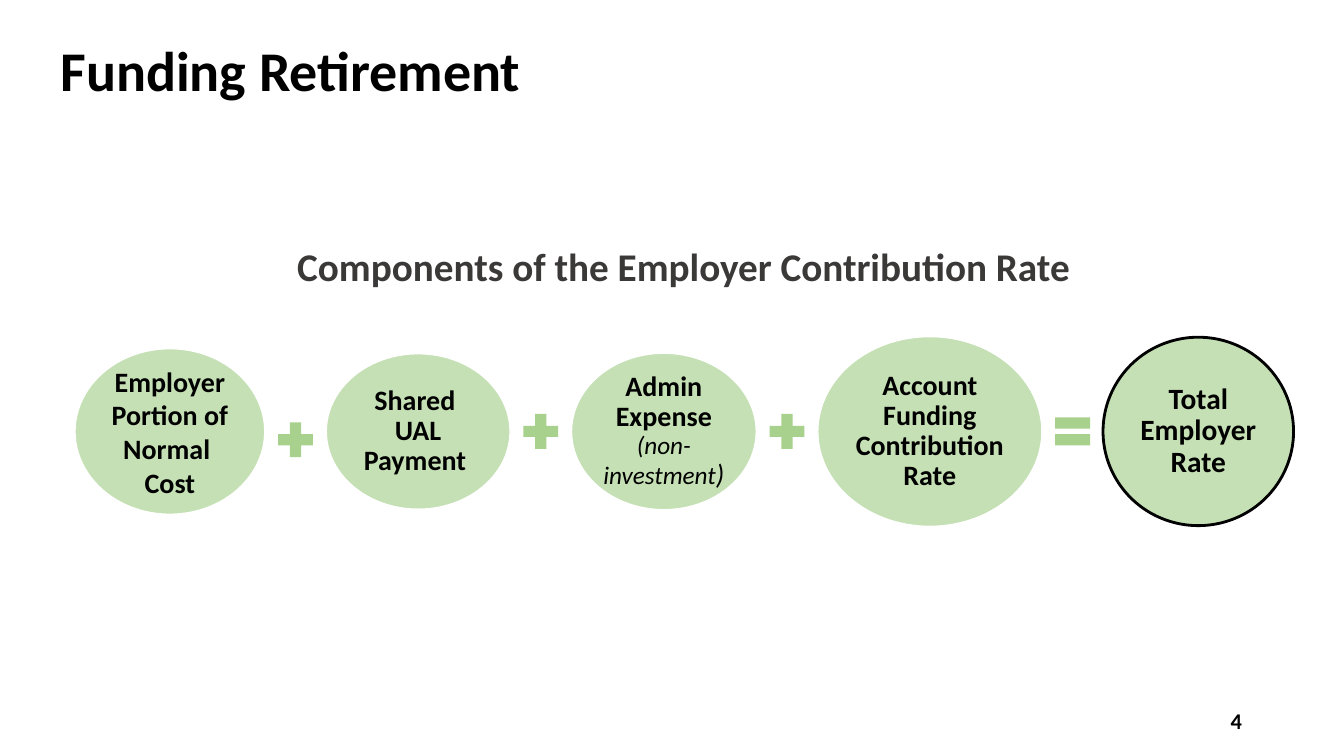
from pptx import Presentation
from pptx.dml.color import RGBColor
from pptx.enum.shapes import MSO_SHAPE
from pptx.enum.text import MSO_ANCHOR, PP_ALIGN
from pptx.util import Pt

BLACK = RGBColor(0x00, 0x00, 0x00)
WHITE = RGBColor(0xFF, 0xFF, 0xFF)
CHARCOAL = RGBColor(0x3B, 0x38, 0x38)
PALE_GREEN = RGBColor(0xC5, 0xE0, 0xB4)
LEAF_GREEN = RGBColor(0xA9, 0xD1, 0x8E)

FONT = "Calibri"
SYMBOL_SIZE = 33.8
GAP = 4.8
NORMAL_COST_DROP = 6

COMPONENTS = [
    dict(lines=["Employer", "Portion of Normal \vCost"], width=136.1, height=118.8, spacing=1.0),
    dict(lines=["Shared \vUAL Payment "], width=131.8, height=111.6),
    dict(lines=["Admin Expense "], width=132.5, height=112.3,
         shape_type=MSO_SHAPE.FLOWCHART_CONNECTOR,
         note=[("(non- investment", 18), (")", 20)]),
    dict(lines=["Account Funding Contribution Rate"], width=160.6, height=136.1),
    dict(lines=["Total Employer Rate"], width=136.1, height=134.6, size=21,
         line_color=BLACK, line_width=2),
]
SYMBOLS = [
    (MSO_SHAPE.MATH_PLUS, NORMAL_COST_DROP),
    (MSO_SHAPE.MATH_PLUS, 0),
    (MSO_SHAPE.MATH_PLUS, 0),
    (MSO_SHAPE.MATH_EQUAL, 0),
]


def add_text(paragraph, text, size=20, color=BLACK, bold=True, italic=False):
    """Append formatted text to a paragraph."""
    for index, part in enumerate(text.split("\v")):
        if index:
            paragraph.add_line_break()
        run = paragraph.add_run()
        run.text = part
        run.font.name = FONT
        run.font.size = Pt(size)
        run.font.bold = bold
        run.font.italic = italic
        run.font.color.rgb = color


def add_label(slide, box, text, alignment=PP_ALIGN.LEFT, anchor=MSO_ANCHOR.TOP,
              indent=7.2, spacing=1.0, **text_format):
    """Place a one-paragraph text box in the given box."""
    frame = slide.shapes.add_textbox(*map(Pt, box)).text_frame
    frame.word_wrap = True
    frame.vertical_anchor = anchor
    frame.margin_left = Pt(indent)
    paragraph = frame.paragraphs[0]
    paragraph.alignment = alignment
    paragraph.line_spacing = spacing
    add_text(paragraph, text, **text_format)


def add_filled_shape(slide, shape_type, box, fill):
    """Place a flat, unlined shape in the given box."""
    shape = slide.shapes.add_shape(shape_type, *map(Pt, box))
    shape.shadow.inherit = False
    shape.fill.solid()
    shape.fill.fore_color.rgb = fill
    shape.line.fill.background()
    return shape


def add_component(slide, left, middle, lines, width, height, size=20, spacing=0.9,
                  shape_type=MSO_SHAPE.OVAL, line_color=WHITE, line_width=1.5, note=()):
    """Place one rate component as an oval centred on the middle height."""
    box = (left, middle - height / 2, width, height)
    shape = add_filled_shape(slide, shape_type, box, PALE_GREEN)
    shape.line.color.rgb = line_color
    shape.line.width = Pt(line_width)
    frame = shape.text_frame
    frame.word_wrap = True
    frame.vertical_anchor = MSO_ANCHOR.MIDDLE
    frame.margin_left = frame.margin_right = Pt(2)
    frame.margin_top = frame.margin_bottom = Pt(2)
    for index, line in enumerate(lines):
        paragraph = frame.add_paragraph() if index else frame.paragraphs[0]
        paragraph.alignment = PP_ALIGN.CENTER
        paragraph.line_spacing = spacing
        add_text(paragraph, line, size=size)
    for text, note_size in note:
        add_text(paragraph, text, size=note_size, bold=False, italic=True)


def add_equation(slide, left, middle):
    """Lay the components and the symbols between them out in a row."""
    for index, component in enumerate(COMPONENTS):
        add_component(slide, left, middle, **component)
        left += component["width"] + GAP
        if index < len(SYMBOLS):
            symbol, drop = SYMBOLS[index]
            top = middle - SYMBOL_SIZE / 2 + drop
            add_filled_shape(slide, symbol, (left, top, SYMBOL_SIZE, SYMBOL_SIZE), LEAF_GREEN)
            left += SYMBOL_SIZE + GAP


def main():
    """Build the funding slide and save it."""
    presentation = Presentation()
    presentation.slide_width = Pt(960)
    presentation.slide_height = Pt(540)
    slide = presentation.slides.add_slide(presentation.slide_layouts[6])
    add_label(slide, (0, 0, 960, 104.4), "Funding Retirement", size=40,
              anchor=MSO_ANCHOR.MIDDLE, indent=43.2, spacing=0.9)
    add_equation(slide, 53.3, 308.2)
    add_label(slide, (678.2, 500.4, 216, 28.8), "4", size=16,
              alignment=PP_ALIGN.RIGHT, anchor=MSO_ANCHOR.MIDDLE)
    add_label(slide, (53.3, 169.2, 869.8, 41), "Components of the Employer Contribution Rate",
              size=28, color=CHARCOAL, alignment=PP_ALIGN.CENTER)
    presentation.save("out.pptx")


if __name__ == "__main__":
    main()
